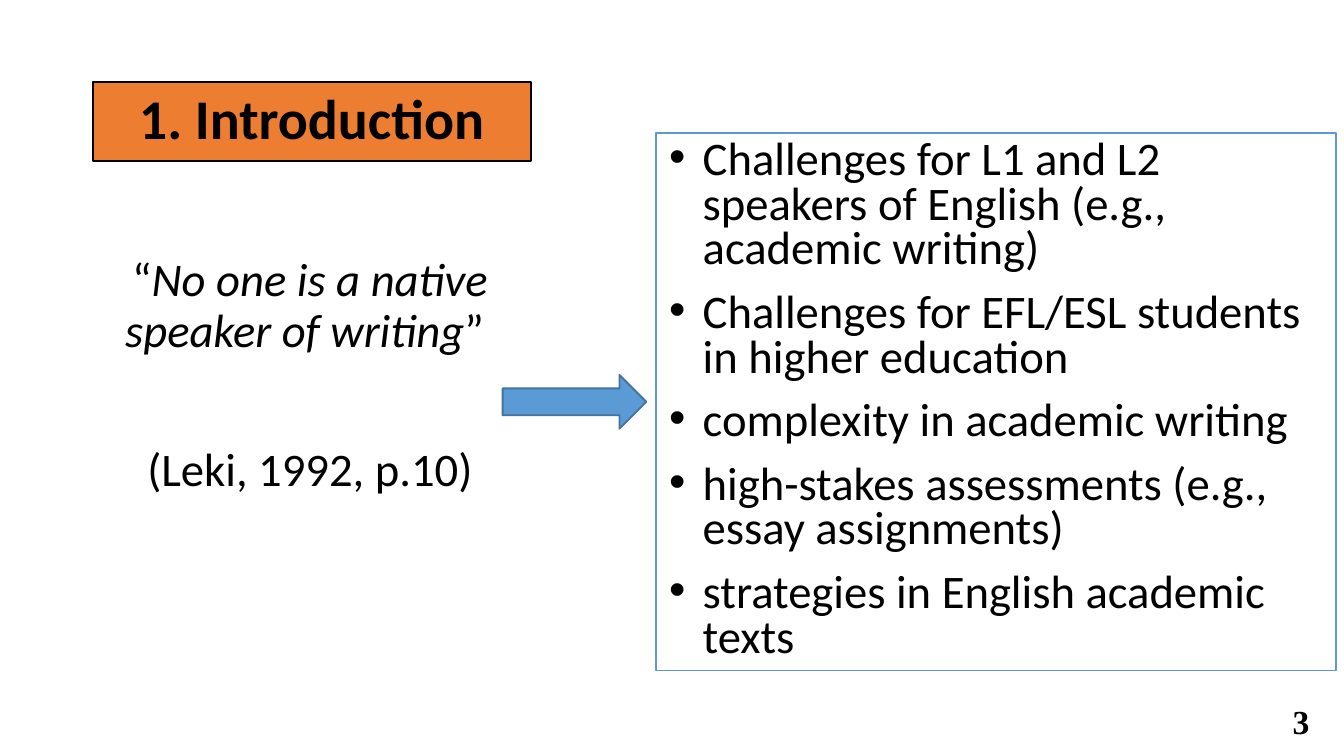
from lxml import etree
from pptx import Presentation
from pptx.dml.color import RGBColor
from pptx.enum.shapes import MSO_SHAPE
from pptx.enum.text import MSO_ANCHOR, PP_ALIGN
from pptx.oxml.ns import qn
from pptx.util import Pt

RECTANGLE = MSO_SHAPE.RECTANGLE
RIGHT_ARROW = MSO_SHAPE.RIGHT_ARROW
TOP = MSO_ANCHOR.TOP
MIDDLE = MSO_ANCHOR.MIDDLE
LEFT = PP_ALIGN.LEFT
CENTER = PP_ALIGN.CENTER

BLACK = "000000"
WHITE = "FFFFFF"
ORANGE = "ED7D31"
BLUE = "5B9BD5"
DARK_BLUE = "43739E"

CHALLENGES = [
    "Challenges for L1 and L2 speakers of English (e.g., academic writing)",
    "Challenges for EFL/ESL students in higher education",
    "complexity in academic writing",
    "high-stakes assessments (e.g., essay assignments)",
    "strategies in English academic texts",
]


def color(hex_string):
    return RGBColor.from_string(hex_string)


def add_box(slide, kind, left, top, width, height, fill, line):
    shape = slide.shapes.add_shape(kind, Pt(left), Pt(top), Pt(width), Pt(height))
    shape.shadow.inherit = False
    shape.fill.solid()
    shape.fill.fore_color.rgb = color(fill)
    shape.line.color.rgb = color(line)
    shape.line.width = Pt(1)
    return shape


def add_text_box(slide, left, top, width, height):
    return slide.shapes.add_textbox(Pt(left), Pt(top), Pt(width), Pt(height))


def add_bullet(paragraph, indent):
    properties = paragraph._p.get_or_add_pPr()
    properties.set("marL", str(Pt(indent)))
    properties.set("indent", str(-Pt(indent)))
    etree.SubElement(properties, qn("a:buFont")).set("typeface", "Arial")
    etree.SubElement(properties, qn("a:buChar")).set("char", "•")


def write_text(shape, paragraphs, size=25, font="Calibri", bold=False, align=LEFT,
               anchor=TOP, wrap=True, spacing=1.0, before=0, bullet_indent=0):
    """Write paragraphs, each a list of (text, italic) runs."""
    frame = shape.text_frame
    frame.word_wrap = wrap
    frame.vertical_anchor = anchor
    for index, runs in enumerate(paragraphs):
        paragraph = frame.add_paragraph() if index else frame.paragraphs[0]
        if bullet_indent:
            add_bullet(paragraph, bullet_indent)
        paragraph.alignment = align
        paragraph.line_spacing = spacing
        if index:
            paragraph.space_before = Pt(before)
        for text, italic in runs:
            run = paragraph.add_run()
            run.text = text
            run.font.name = font
            run.font.size = Pt(size)
            run.font.bold = bold
            run.font.italic = italic
            run.font.color.rgb = color(BLACK)


def main():
    presentation = Presentation()
    presentation.slide_width = Pt(720)
    presentation.slide_height = Pt(405)
    slide = presentation.slides.add_slide(presentation.slide_layouts[6])

    # Challenges list
    challenges = add_box(slide, RECTANGLE, 351.4, 71.3, 364.3, 288, WHITE, BLUE)
    write_text(challenges, [[(text, False)] for text in CHALLENGES],
               spacing=0.8, before=10, bullet_indent=18)

    # Quotation and its source
    quotation = add_text_box(slide, 49.7, 133.9, 232.6, 162.7)
    quote_runs = [("“", False), ("No one is a native speaker of writing", True), ("” ", False)]
    write_text(quotation, [quote_runs, [("(Leki, 1992, p.10)", False)]],
               align=CENTER, spacing=0.9, before=47.5)

    # Title
    title = add_box(slide, RECTANGLE, 49.7, 44, 234.7, 42.5, ORANGE, BLACK)
    write_text(title, [[("1. Introduction", False)]], size=30, bold=True,
               align=CENTER, anchor=MIDDLE, spacing=0.9)

    # Slide number
    number = add_text_box(slide, 685.4, 372.2, 20.9, 21.6)
    write_text(number, [[("3", False)]], size=18, font="Times New Roman",
               bold=True, wrap=False)

    # Arrow from quotation to challenges
    add_box(slide, RIGHT_ARROW, 269.3, 200.9, 77, 28.8, BLUE, DARK_BLUE)

    presentation.save("out.pptx")


if __name__ == "__main__":
    main()
